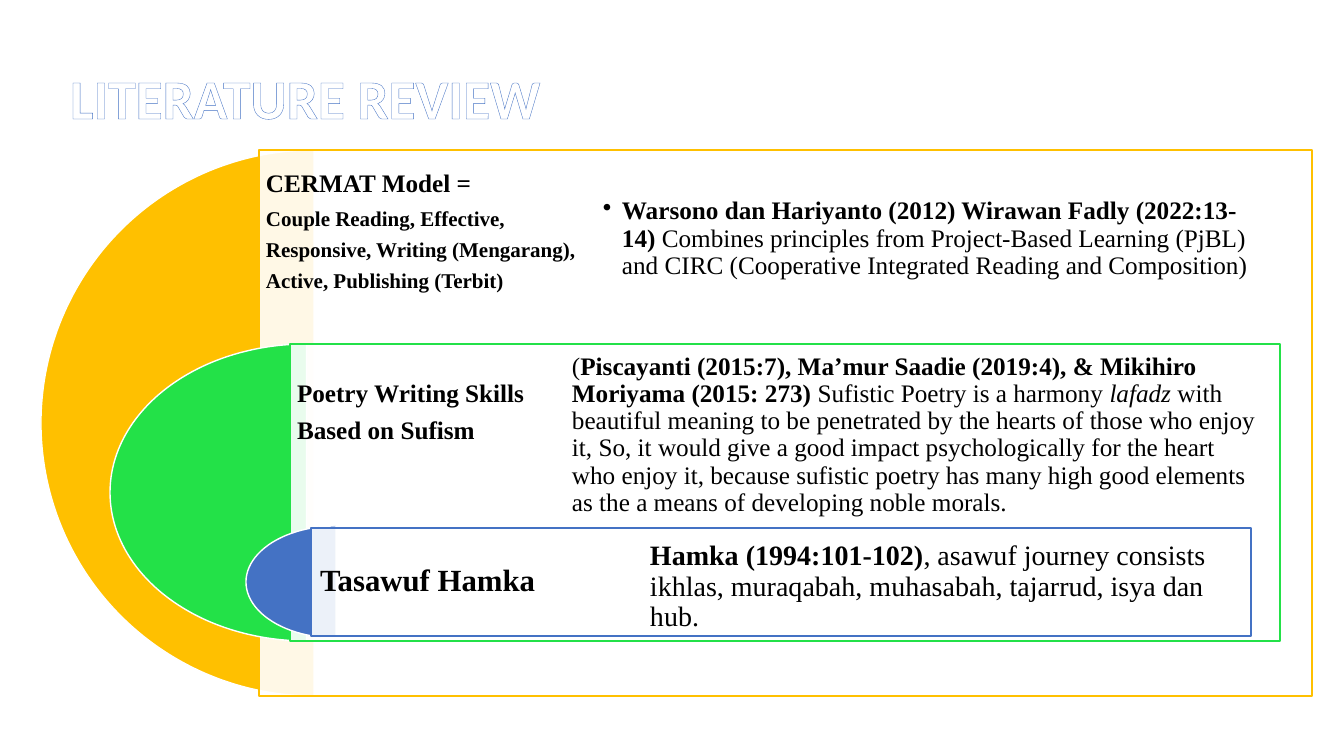
from lxml import etree
from pptx import Presentation
from pptx.dml.color import RGBColor
from pptx.enum.shapes import MSO_SHAPE
from pptx.enum.text import MSO_ANCHOR, MSO_AUTO_SIZE, PP_ALIGN
from pptx.oxml.ns import qn
from pptx.util import Emu, Pt

RECTANGLE, PIE = MSO_SHAPE.RECTANGLE, MSO_SHAPE.PIE
MIDDLE, LEFT, NO_AUTOFIT = MSO_ANCHOR.MIDDLE, PP_ALIGN.LEFT, MSO_AUTO_SIZE.NONE
EMU_PER_PX = 914400 / 100.8
SERIF = "Times New Roman"
BLACK, WHITE, BLUE = "000000", "FFFFFF", "4472C4"
BULLET_INDENT = 19
DETAIL_INSET = 27

# Panel boxes are on the slide; pie and details are offset from the panel's corner.
LAYERS = [
    {
        "color": "FFC000", "panel": (259, 150, 1053, 546),
        "pie": (-218, 546, 546), "label_height": 164, "label_inset": 7,
        "label": [("CERMAT Model =", 18), ("Couple Reading, Effective,", 15),
                  ("Responsive, Writing (Mengarang),", 15),
                  ("Active, Publishing (Terbit)", 15)],
        "details": (317, 3, 712, 172), "size": 18, "bullet": True,
        "runs": [("Warsono dan Hariyanto (2012) Wirawan Fadly (2022:13-14) ", "bold"),
                 ("Combines principles from Project-Based Learning (PjBL) and CIRC "
                  "(Cooperative Integrated Reading and Composition)", "")],
    },
    {
        "color": "23E148", "panel": (290, 344, 990, 297),
        "pie": (-180, 393, 297), "label_height": 137, "label_inset": 7,
        "label": [("Poetry Writing Skills", 18), ("Based on Sufism", 18)],
        "details": (255, 9, 745, 164), "size": 18, "bullet": False,
        "runs": [("(", ""),
                 ("Piscayanti (2015:7), Ma’mur Saadie (2019:4), & Mikihiro Moriyama "
                  "(2015: 273) ", "bold"),
                 ("Sufistic Poetry is a harmony ", ""), ("lafadz", "italic"),
                 (" with beautiful meaning to be penetrated by the hearts of those who "
                  "enjoy it, So, it would give a good impact psychologically for the heart "
                  "who enjoy it, because sufistic poetry has many high good elements as "
                  "the a means of developing noble morals.", "")],
    },
    {
        "color": BLUE, "panel": (311, 528, 940, 108),
        "pie": (-65, 180, 112), "label_height": 108, "label_inset": 9,
        "label": [("Tasawuf Hamka", 22)],
        "details": (312, -23, 658, 164), "size": 20, "bullet": False,
        "runs": [("Hamka (1994:101-102)", "bold"),
                 (", asawuf journey consists ikhlas, muraqabah, muhasabah, tajarrud, "
                  "isya dan hub.", "")],
    },
]


def px(length):
    return Emu(round(length * EMU_PER_PX))


def rgb(hex_color):
    return RGBColor.from_string(hex_color)


def style_font(font, name, size, color, bold=False, italic=False):
    font.name, font.size = name, Pt(size)
    font.bold, font.italic = bold, italic
    font.color.rgb = rgb(color)


def add_block(slide, preset, box, fill, line):
    shape = slide.shapes.add_shape(preset, *map(px, box))
    shape.shadow.inherit = False
    shape.fill.solid()
    shape.fill.fore_color.rgb = rgb(fill)
    shape.line.color.rgb = rgb(line)
    shape.line.width = Pt(1)
    return shape


def add_text_frame(slide, box, inset):
    frame = slide.shapes.add_textbox(*map(px, box)).text_frame
    frame.word_wrap = True
    frame.vertical_anchor = MIDDLE
    frame.margin_left = frame.margin_right = px(inset)
    frame.margin_top = frame.margin_bottom = px(inset)
    return frame


def add_bullet(paragraph):
    properties = paragraph._p.get_or_add_pPr()
    properties.set("marL", str(px(BULLET_INDENT)))
    properties.set("indent", str(-px(BULLET_INDENT)))
    etree.SubElement(properties, qn("a:buChar")).set("char", "•")


def add_title(slide, box):
    title = slide.shapes.title
    title.left, title.top, title.width, title.height = map(px, box)
    frame = title.text_frame
    frame.text = "LITERATURE REVIEW"
    frame.auto_size = NO_AUTOFIT
    frame.vertical_anchor = MIDDLE
    paragraph = frame.paragraphs[0]
    paragraph.alignment = LEFT
    paragraph.line_spacing = 0.9
    run = paragraph.runs[0]
    style_font(run.font, "Calibri", 39.6, WHITE, bold=True)
    outline = etree.Element(qn("a:ln"), w=str(Pt(0.8)))
    fill = etree.SubElement(outline, qn("a:solidFill"))
    etree.SubElement(fill, qn("a:srgbClr")).set("val", BLUE)
    run._r.get_or_add_rPr().insert(0, outline)


def add_label(slide, box, inset, lines):
    frame = add_text_frame(slide, box, inset)
    frame.text = "\n".join(text for text, _ in lines)
    for paragraph, (_, size) in zip(frame.paragraphs, lines):
        paragraph.line_spacing = 0.9
        paragraph.space_after = Pt(round(0.4 * size))
        style_font(paragraph.runs[0].font, SERIF, size, BLACK, bold=True)


def add_details(slide, box, runs, size, bullet):
    paragraph = add_text_frame(slide, box, DETAIL_INSET).paragraphs[0]
    if bullet:
        add_bullet(paragraph)
    paragraph.line_spacing = 0.9
    paragraph.space_after = Pt(3)
    for text, style in runs:
        run = paragraph.add_run()
        run.text = text
        style_font(run.font, SERIF, size, BLACK, style == "bold", style == "italic")


def add_layer(slide, layer):
    """Place a half disc, its translucent panel, the label and the details."""
    left, top, width, height = layer["panel"]
    pie_offset, pie_width, pie_height = layer["pie"]
    pie_top = top + (height - pie_height) / 2
    pie = add_block(slide, PIE, (left + pie_offset, pie_top, pie_width, pie_height),
                    layer["color"], WHITE)
    pie.adjustments[0], pie.adjustments[1] = 54, 162

    panel = add_block(slide, RECTANGLE, layer["panel"], WHITE, layer["color"])
    panel_color = panel._element.spPr.find(qn("a:solidFill"))[0]
    etree.SubElement(panel_color, qn("a:alpha")).set("val", "90000")

    add_label(slide, (left, top, width / 2, layer["label_height"]),
              layer["label_inset"], layer["label"])
    x, y, details_width, details_height = layer["details"]
    add_details(slide, (left + x, top + y, details_width, details_height),
                layer["runs"], layer["size"], layer["bullet"])


def main():
    presentation = Presentation()
    presentation.slide_width, presentation.slide_height = px(1344), px(756)
    slide = presentation.slides.add_slide(presentation.slide_layouts[5])
    add_title(slide, (60, 69, 1159, 64))
    for layer in LAYERS:
        add_layer(slide, layer)
    presentation.save("out.pptx")


if __name__ == "__main__":
    main()
